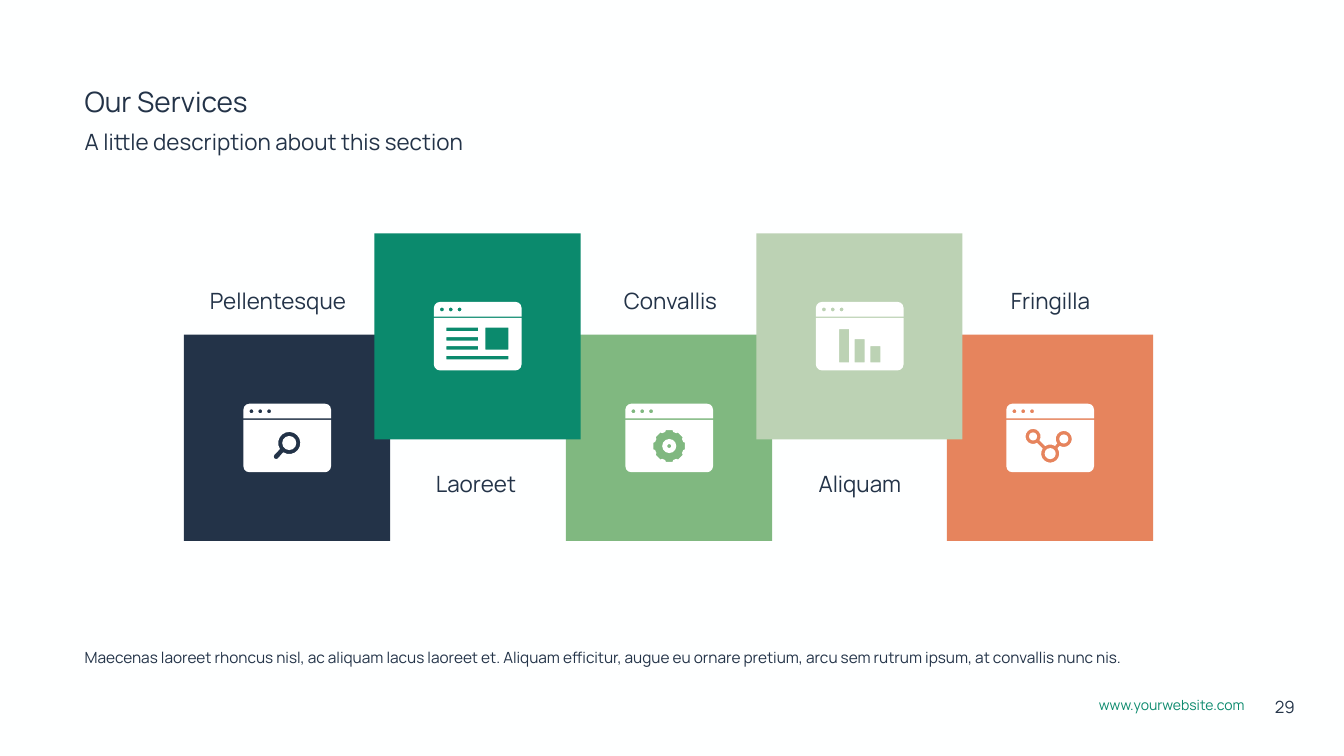
import math
from dataclasses import dataclass

import pptx
import pptx.dml.color
import pptx.enum.shapes
import pptx.enum.text
import pptx.util

Inches = pptx.util.Inches
Kind = pptx.enum.shapes.MSO_SHAPE
Align = pptx.enum.text.PP_ALIGN


@dataclass(frozen=True)
class Theme:
    font: str = "Manrope"
    paper: str = "FEFFFF"
    white: str = "FFFFFF"
    navy: str = "233348"
    teal: str = "0B8A6D"
    green: str = "80B880"
    sage: str = "BCD2B4"
    coral: str = "E6845D"
    title: int = 40
    label: int = 32
    page: int = 24
    note: int = 22
    website: int = 20


theme = Theme()
deck = pptx.Presentation()
deck.slide_width, deck.slide_height = Inches(26.67), Inches(15)
slide = deck.slides.add_slide(deck.slide_layouts[0])
shapes = slide.shapes
slide.background.fill.solid()
slide.background.fill.fore_color.rgb = pptx.dml.color.RGBColor.from_string(theme.paper)


def write(holder, box, text, size, color=theme.navy, align=Align.LEFT, inset=(0, 0), spacing=1):
    holder.left, holder.top, holder.width, holder.height = map(Inches, box)
    frame = holder.text_frame
    frame.word_wrap = True
    frame.auto_size = pptx.enum.text.MSO_AUTO_SIZE.NONE
    frame.vertical_anchor = pptx.enum.text.MSO_ANCHOR.TOP
    frame.margin_left = frame.margin_right = Inches(inset[0])
    frame.margin_top = frame.margin_bottom = Inches(inset[1])
    line = frame.paragraphs[0]
    line.alignment, line.line_spacing = align, spacing
    line.space_before = pptx.util.Pt(0)
    run = line.add_run()
    run.text = text
    run.font.name, run.font.size = theme.font, pptx.util.Pt(size)
    run.font.color.rgb = pptx.dml.color.RGBColor.from_string(color)


def paint(part, color):
    part.shadow.inherit = False
    part.fill.solid()
    part.fill.fore_color.rgb = pptx.dml.color.RGBColor.from_string(color)
    part.line.fill.background()
    return part


write(shapes.title, (1.68, 1.67, 6.42, 0.67), "Our Services", theme.title)
write(slide.placeholders[1], (1.68, 2.55, 11.03, 0.54),
      "A little description about this section", theme.label)

# Each arc is center x, center y, radius, start angle, end angle, steps
header = [[(0.12, 0.12, 0.12, 180, 270, 3), (1.62, 0.12, 0.12, 270, 360, 3),
           (1.74, 0.29, 0, 0, 0, 0), (0, 0.29, 0, 0, 0, 0)]]
header += [[(0.16 + 0.35 * button / 2, 0.15, 0.04, 0, 315, 7)] for button in range(3)]
body = [(0, 0.32, 0, 0, 0, 0), (1.74, 0.32, 0, 0, 0, 0),
        (1.62, 1.24, 0.12, 0, 90, 3), (0.12, 1.24, 0.12, 90, 180, 3)]

search = [[(0.91, 0.78, 0.22, 147, 483, 16), (0.65, 1.05, 0.05, 45, 225, 4)]]
network = [[(0.53, 0.65, 0.15, 58, 392, 14), (0.87, 0.99, 0.18, 236, 302, 3),
            (1.14, 0.70, 0.16, 146, 480, 14), (0.87, 0.99, 0.18, 324, 574, 12)]]
gear = [[(0.87, 0.84, radius, 45 * tooth + start, 45 * tooth + end, 1)
         for tooth in range(8) for radius, start, end in ((0.32, -12, 12), (0.29, 16, 29))]]
article_blocks = [(0.25, 0.51, 0.63, 0.07), (0.25, 0.70, 0.63, 0.07), (0.25, 0.88, 0.63, 0.07),
                  (0.25, 1.07, 1.23, 0.07), (1.02, 0.51, 0.46, 0.44)]
chart_blocks = [(0.46, 0.54, 0.2, 0.66), (0.77, 0.74, 0.2, 0.46), (1.08, 0.88, 0.2, 0.32)]
article, chart = [
    [[(corner_x, corner_y, 0, 0, 0, 0) for corner_x, corner_y in
      ((x, y), (x + width, y), (x + width, y + height), (x, y + height))]
     for x, y, width, height in blocks]
    for blocks in (article_blocks, chart_blocks)]

search_centers = [(Kind.OVAL, 0.91, 0.78, 0.14)]
gear_centers = [(Kind.DONUT, 0.87, 0.84, 0.14)]
network_centers = [(Kind.OVAL, 0.87, 0.99, 0.11), (Kind.OVAL, 1.14, 0.70, 0.09),
                   (Kind.OVAL, 0.53, 0.65, 0.08)]

services = [
    ("Pellentesque", theme.navy, 3.65, 3.65, 3.73, search, search_centers),
    ("Convallis", theme.green, 11.23, 11.6, 3.41, gear, gear_centers),
    ("Fringilla", theme.coral, 18.79, 19.19, 3.31, network, network_centers),
    ("Laoreet", theme.teal, 7.43, 7.74, 3.41, article, []),
    ("Aliquam", theme.sage, 15.01, 15.41, 3.31, chart, []),
]
raised_labels = ("Laoreet", "Aliquam")

for label, color, tile_left, label_left, label_width, cutouts, centers in services:
    raised = label in raised_labels
    tile_top, label_top, top = (4.63, 9.33, 5.99) if raised else (6.64, 5.69, 8.01)
    left = tile_left + 1.18
    paint(shapes.add_shape(Kind.RECTANGLE, Inches(tile_left), Inches(tile_top),
                           Inches(4.09), Inches(4.09)), color)
    write(shapes.add_textbox(0, 0, 0, 0), (label_left, label_top, label_width, 0.54),
          label, theme.label, align=Align.CENTER)

    for contours in (header, [body] + cutouts):
        pane = None
        for contour in contours:
            points = []
            for x, y, radius, start, end, steps in contour:
                for step in range(steps + 1):
                    angle = math.radians(start + (end - start) * step / max(steps, 1))
                    points.append((Inches(left + x + radius * math.cos(angle)),
                                   Inches(top + y + radius * math.sin(angle))))
            if pane is None:
                pane = shapes.build_freeform(*points[0])
            else:
                pane.move_to(*points[0])
            pane.add_line_segments(points[1:], close=True)
        paint(pane.convert_to_shape(), theme.white)

    for kind, x, y, radius in centers:
        center = paint(shapes.add_shape(kind, Inches(left + x - radius), Inches(top + y - radius),
                                        Inches(2 * radius), Inches(2 * radius)), theme.white)
        if kind == Kind.DONUT:
            center.adjustments[0] = 0.36

write(shapes.add_textbox(0, 0, 0, 0), (1.68, 12.5, 23.31, 0.74),
      "Maecenas laoreet rhoncus nisl, ac aliquam lacus laoreet et. Aliquam efficitur, augue eu "
      "ornare pretium, arcu sem rutrum ipsum, at convallis nunc nis.", theme.note, spacing=2)
write(shapes.add_textbox(0, 0, 0, 0), (21.71, 13.77, 3.38, 0.43), "www.yourwebsite.com",
      theme.website, theme.teal, inset=(0.1, 0.05))
write(shapes.add_textbox(0, 0, 0, 0), (25.2, 13.78, 0.75, 0.42), "29",
      theme.page, inset=(0.1, 0.05))

deck.save("out.pptx")
